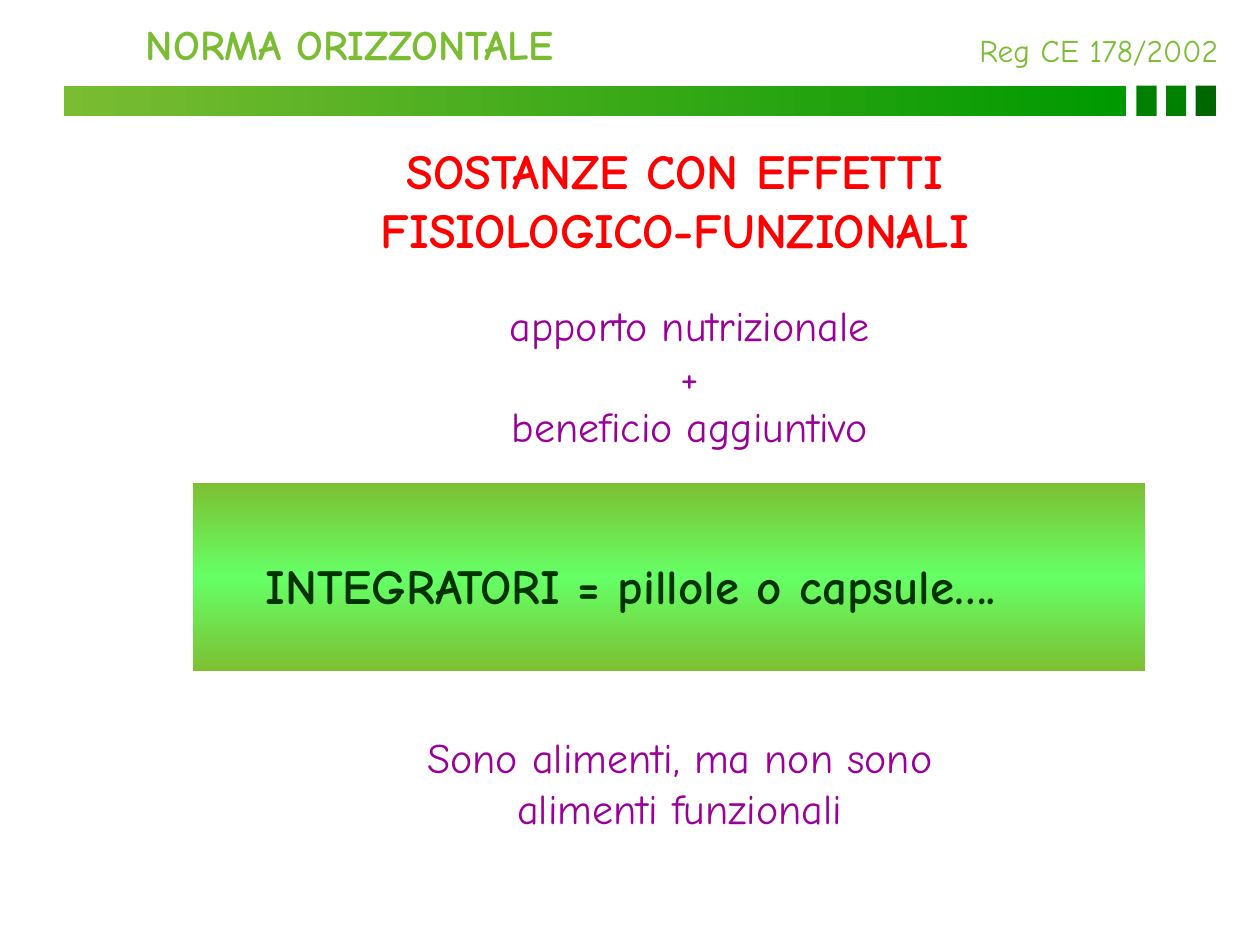
import copy

import pptx
import pptx.dml.color
import pptx.enum.shapes
import pptx.enum.text
import pptx.util

Inches = pptx.util.Inches
RGBColor = pptx.dml.color.RGBColor
ALIGN = pptx.enum.text.PP_ALIGN

FONT = "Comic Neue"
LIME = RGBColor(0x7A, 0xBC, 0x32)
GREEN = RGBColor(0x00, 0x99, 0x00)
MID_GREEN = RGBColor(0x00, 0x80, 0x00)
DARK_GREEN = RGBColor(0x00, 0x66, 0x00)
PANEL_EDGE = RGBColor(0x7C, 0xC0, 0x32)
PANEL_GLOW = RGBColor(0x66, 0xFF, 0x66)
INK = RGBColor(0x00, 0x33, 0x00)
RED = RGBColor(0xFF, 0x00, 0x00)
PURPLE = RGBColor(0x99, 0x00, 0x99)

# Lines, (left, top, width, height), format
HEADINGS = [
    (["NORMA ORIZZONTALE"], (1.06, 0.1, 4.16, 0.5),
     dict(size=24, color=LIME, bold=True, align=ALIGN.LEFT, wrap=False)),
    (["Reg CE 178/2002"], (7.59, 0.2, 2.26, 0.4),
     dict(size=18, color=LIME, wrap=False)),
    (["SOSTANZE CON EFFETTI", "FISIOLOGICO-FUNZIONALI"], (1.14, 1.07, 8.43, 1.03),
     dict(size=28, color=RED, bold=True)),
]
STATEMENTS = [
    (["apporto nutrizionale", "+", "beneficio aggiuntivo"], (3.11, 2.33, 4.73, 1.3),
     dict(size=24, color=PURPLE)),
    (["Sono alimenti, ma non sono", "alimenti funzionali"], (3.03, 5.76, 4.73, 1.3),
     dict(size=24, color=PURPLE)),
]
SUPPLEMENTS = (["INTEGRATORI = pillole o capsule…."], (2.01, 4.36, 7.02, 0.57),
               dict(size=28, color=INK, bold=True, align=ALIGN.LEFT, wrap=False))

PANEL_BOX = (1.53, 3.83, 7.56, 1.5)
BAR_BOX = (0.51, 0.68, 8.43, 0.24)
TILE_COLORS = [MID_GREEN, MID_GREEN, DARK_GREEN]
TILE_LEFT, TILE_WIDTH, TILE_PITCH = 9.02, 0.16, 0.235


def add_text(shapes, lines, box, size, color, bold=False, align=ALIGN.CENTER, wrap=True):
    frame = shapes.add_textbox(*map(Inches, box)).text_frame
    frame.word_wrap = wrap
    frame.text = "\n".join(lines)
    for paragraph in frame.paragraphs:
        paragraph.alignment = align
        font = paragraph.runs[0].font
        font.name, font.size, font.bold = FONT, pptx.util.Pt(size), bold
        font.color.rgb = color


def add_block(shapes, box, colors, angle=0):
    """Add a rectangle; several colours make an evenly spaced gradient."""
    block = shapes.add_shape(pptx.enum.shapes.MSO_SHAPE.RECTANGLE, *map(Inches, box))
    block.shadow.inherit = False
    block.line.fill.background()
    fill = block.fill
    if len(colors) == 1:
        fill.solid()
        fill.fore_color.rgb = colors[0]
        return
    fill.gradient()
    fill.gradient_angle = angle
    stop_list = fill._fill._gradFill.gsLst
    while len(stop_list) < len(colors):
        stop_list.append(copy.deepcopy(stop_list[0]))
    for index, (stop, color) in enumerate(zip(fill.gradient_stops, colors)):
        stop.position = index / (len(colors) - 1)
        stop.color.rgb = color


def main():
    deck = pptx.Presentation()
    deck.slide_width, deck.slide_height = Inches(10), Inches(7.5)
    shapes = deck.slides.add_slide(deck.slide_layouts[6]).shapes

    for lines, box, style in HEADINGS:
        add_text(shapes, lines, box, **style)

    rule = shapes.add_group_shape().shapes
    add_block(rule, BAR_BOX, [LIME, GREEN])
    for index, color in enumerate(TILE_COLORS):
        left = TILE_LEFT + index * TILE_PITCH
        add_block(rule, (left, BAR_BOX[1], TILE_WIDTH, BAR_BOX[3]), [color])

    for lines, box, style in STATEMENTS:
        add_text(shapes, lines, box, **style)

    add_block(shapes, PANEL_BOX, [PANEL_EDGE, PANEL_GLOW, PANEL_EDGE], angle=90)
    lines, box, style = SUPPLEMENTS
    add_text(shapes, lines, box, **style)

    deck.save("out.pptx")


if __name__ == "__main__":
    main()
